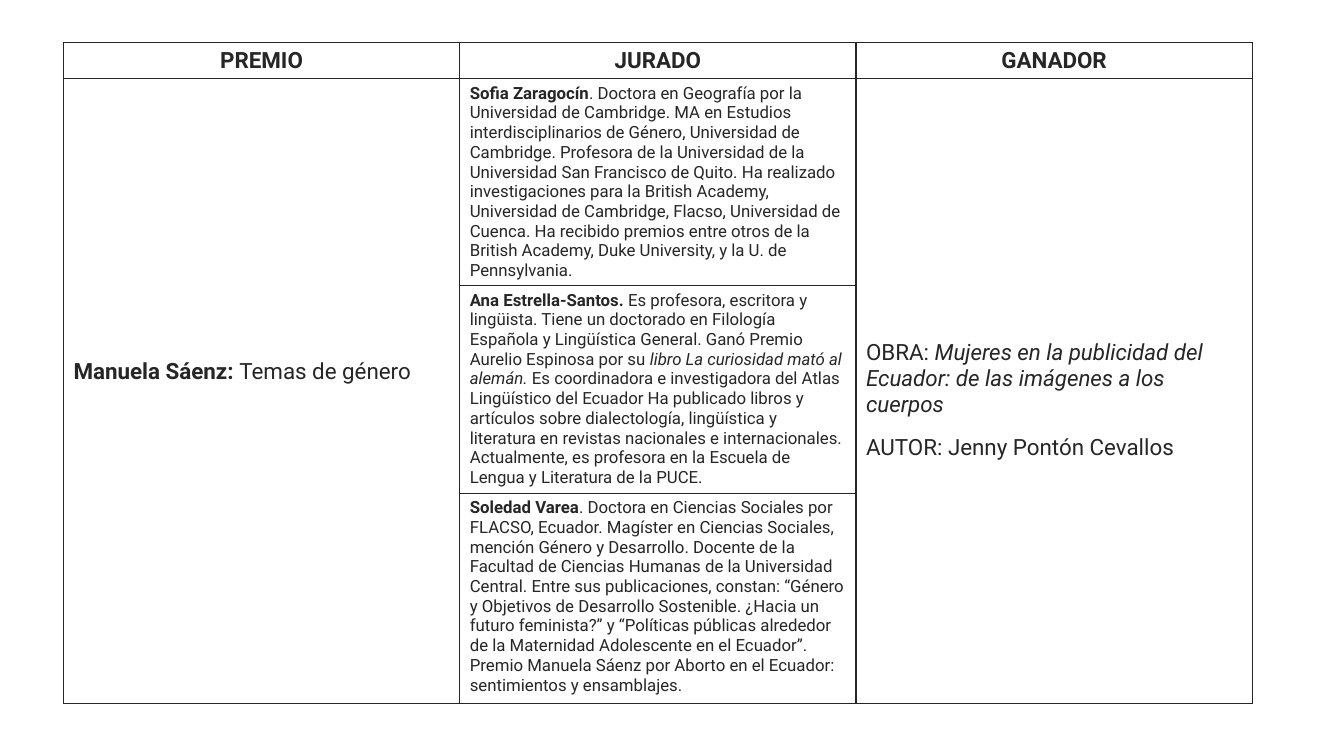
from dataclasses import dataclass

from lxml import etree
from pptx import Presentation
from pptx.dml.color import RGBColor
from pptx.enum.text import MSO_ANCHOR, PP_ALIGN
from pptx.oxml.ns import qn
from pptx.util import Inches, Pt

CENTER, LEFT = PP_ALIGN.CENTER, PP_ALIGN.LEFT
TOP, MIDDLE = MSO_ANCHOR.TOP, MSO_ANCHOR.MIDDLE
BOLD, ITALIC, PLAIN = "bold", "italic", "plain"


@dataclass(frozen=True)
class Theme:
    font: str = "Roboto"
    ink: str = "262626"
    paper: str = "FFFFFF"
    large: int = 16
    small: int = 12
    rule: int = 1
    gap: int = 12


THEME = Theme()
SLIDE_WIDTH, SLIDE_HEIGHT = Inches(13.33), Inches(7.5)
TABLE_LEFT, TABLE_TOP = Inches(0.63), Inches(0.42)
COLUMN_WIDTH = Inches(3.93)
ROW_HEIGHTS = [Inches(height) for height in (0.36, 2.05, 2.06, 2.09)]

HEADINGS = ("PREMIO", "JURADO", "GANADOR")
AWARD = [[("Manuela Sáenz: ", BOLD), ("Temas de género", PLAIN)]]
WINNER = [
    [("OBRA: ", PLAIN),
     ("Mujeres en la publicidad del Ecuador: de las imágenes a los cuerpos", ITALIC)],
    [("AUTOR: Jenny Pontón Cevallos", PLAIN)],
]
JURORS = [
    [("Sofia Zaragocín", BOLD),
     (". Doctora en Geografía por la Universidad de Cambridge. MA en Estudios "
      "interdisciplinarios de Género, Universidad de Cambridge. Profesora de la "
      "Universidad de la Universidad San Francisco de Quito. Ha realizado "
      "investigaciones para la British Academy, Universidad de Cambridge, Flacso, "
      "Universidad de Cuenca. Ha recibido premios entre otros de la British Academy, "
      "Duke University, y la U. de Pennsylvania.", PLAIN)],
    [("Ana Estrella-Santos. ", BOLD),
     ("Es profesora, escritora y lingüista. Tiene un doctorado en Filología Española "
      "y Lingüística General. Ganó Premio Aurelio Espinosa por su ", PLAIN),
     ("libro La curiosidad mató al alemán. ", ITALIC),
     ("Es coordinadora e investigadora del Atlas Lingüístico del Ecuador Ha publicado "
      "libros y artículos sobre dialectología, lingüística y literatura en revistas "
      "nacionales e internacionales. Actualmente, es profesora en la Escuela de Lengua "
      "y Literatura de la PUCE.", PLAIN)],
    [("Soledad Varea", BOLD),
     (". Doctora en Ciencias Sociales por FLACSO, Ecuador. Magíster en Ciencias "
      "Sociales, mención Género y Desarrollo. Docente de la Facultad de Ciencias "
      "Humanas de la Universidad Central. Entre sus publicaciones, constan: “Género y "
      "Objetivos de Desarrollo Sostenible. ¿Hacia un futuro feminista?” y “Políticas "
      "públicas alrededor de la Maternidad Adolescente en el Ecuador”. Premio Manuela "
      "Sáenz por Aborto en el Ecuador: sentimientos y ensamblajes.", PLAIN)],
]


def style_cell(cell):
    properties = cell._tc.get_or_add_tcPr()
    for side in ("a:lnL", "a:lnR", "a:lnT", "a:lnB"):
        border = etree.SubElement(properties, qn(side), w=str(Pt(THEME.rule)))
        fill = etree.SubElement(border, qn("a:solidFill"))
        etree.SubElement(fill, qn("a:srgbClr"), val=THEME.ink)
    cell.fill.solid()
    cell.fill.fore_color.rgb = RGBColor.from_string(THEME.paper)


def write_cell(cell, paragraphs, size, align=LEFT, anchor=TOP):
    cell.vertical_anchor = anchor
    frame = cell.text_frame
    for index, pieces in enumerate(paragraphs):
        paragraph = frame.add_paragraph() if index else frame.paragraphs[0]
        paragraph.alignment = align
        if index < len(paragraphs) - 1:
            paragraph.space_after = Pt(THEME.gap)
        for wording, emphasis in pieces:
            run = paragraph.add_run()
            run.text = wording
            run.font.name = THEME.font
            run.font.size = Pt(size)
            run.font.bold = emphasis == BOLD
            run.font.italic = emphasis == ITALIC
            run.font.color.rgb = RGBColor.from_string(THEME.ink)


def add_awards_table(slide):
    table = slide.shapes.add_table(
        len(ROW_HEIGHTS), len(HEADINGS), TABLE_LEFT, TABLE_TOP,
        COLUMN_WIDTH * len(HEADINGS), sum(ROW_HEIGHTS)).table
    for column in table.columns:
        column.width = COLUMN_WIDTH
    for row, height in zip(table.rows, ROW_HEIGHTS):
        row.height = height
    for cell in table.iter_cells():
        style_cell(cell)
    return table


def merge_body(table, column):
    body = table.cell(1, column)
    body.merge(table.cell(len(JURORS), column))
    return body


def main():
    deck = Presentation()
    deck.slide_width, deck.slide_height = SLIDE_WIDTH, SLIDE_HEIGHT
    slide = deck.slides.add_slide(deck.slide_layouts[6])
    table = add_awards_table(slide)

    for column, heading in enumerate(HEADINGS):
        write_cell(table.cell(0, column), [[(heading, BOLD)]], THEME.large, CENTER)
    for row, juror in enumerate(JURORS, start=1):
        write_cell(table.cell(row, 1), [juror], THEME.small)

    award_cell = merge_body(table, 0)
    award_cell.margin_bottom = Inches(0.43)
    write_cell(award_cell, AWARD, THEME.large, anchor=MIDDLE)

    winner_cell = merge_body(table, 2)
    winner_cell.margin_top = Inches(0.23)
    write_cell(winner_cell, WINNER, THEME.large, anchor=MIDDLE)

    deck.save("out.pptx")


if __name__ == "__main__":
    main()
